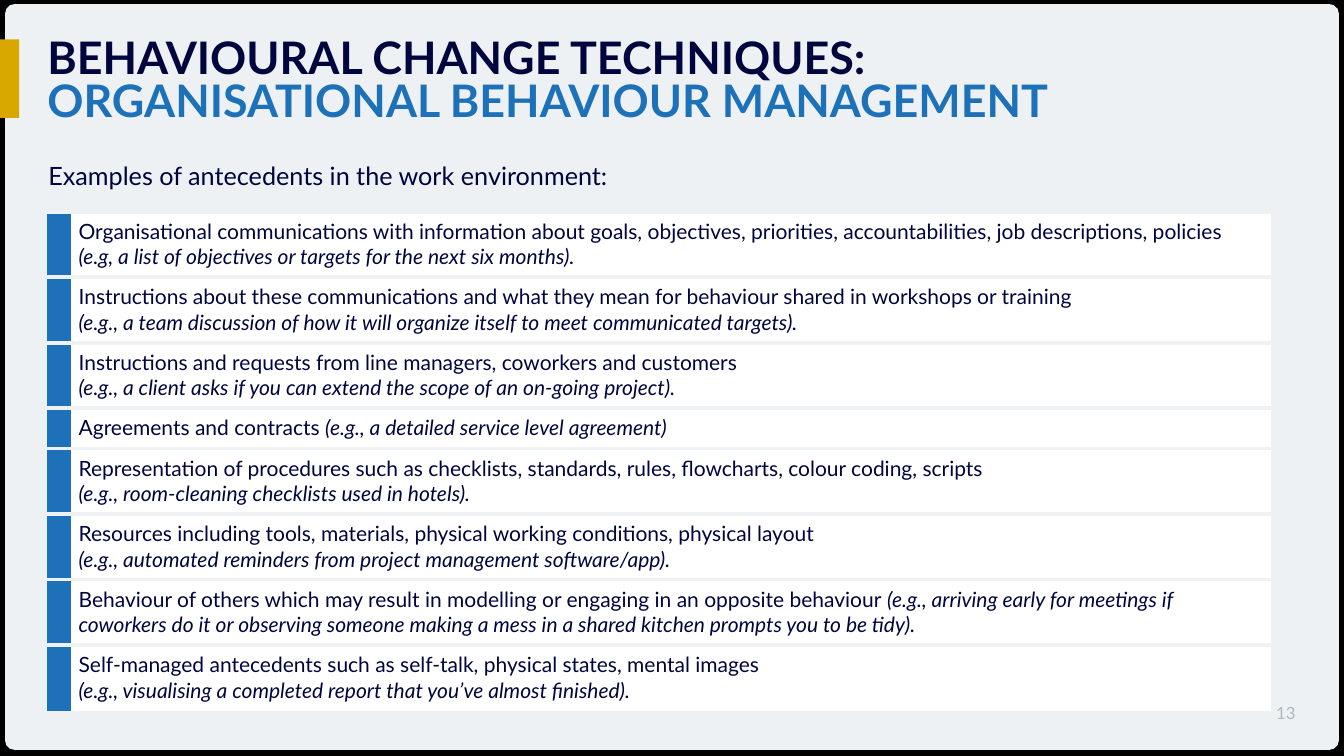
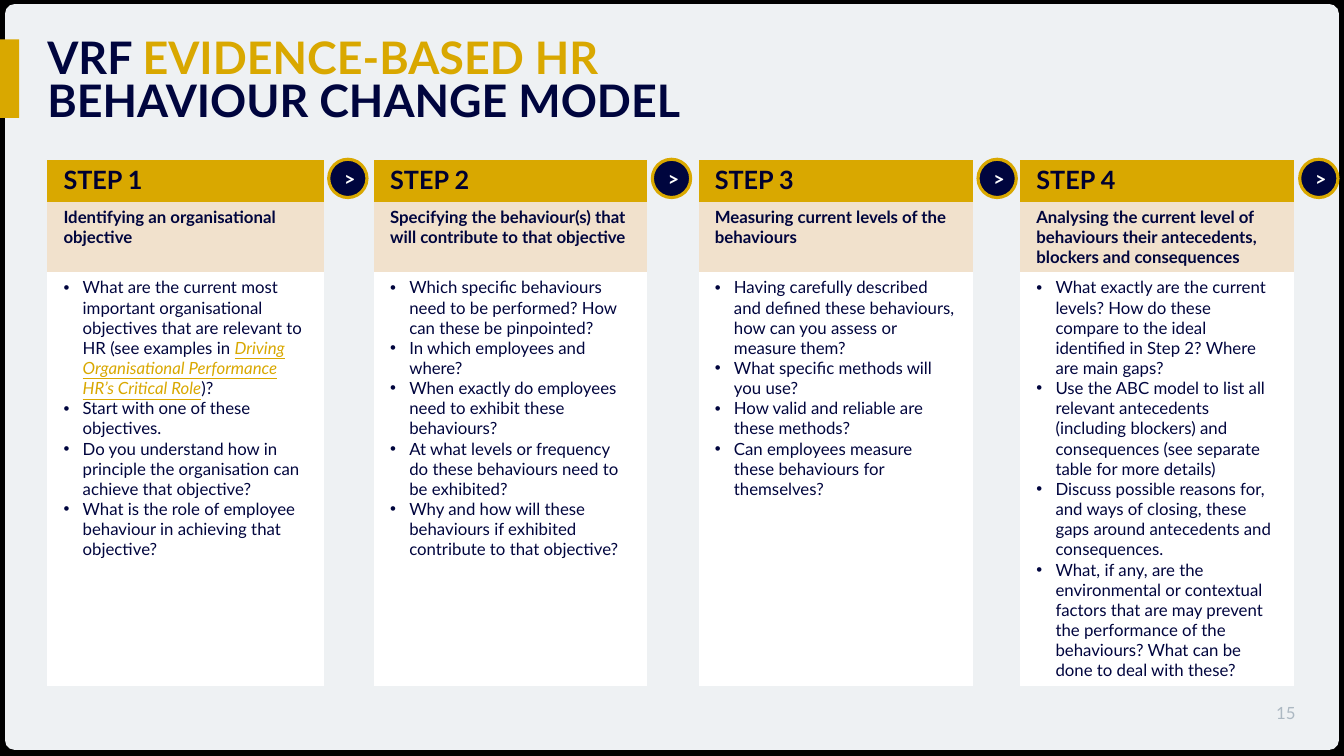
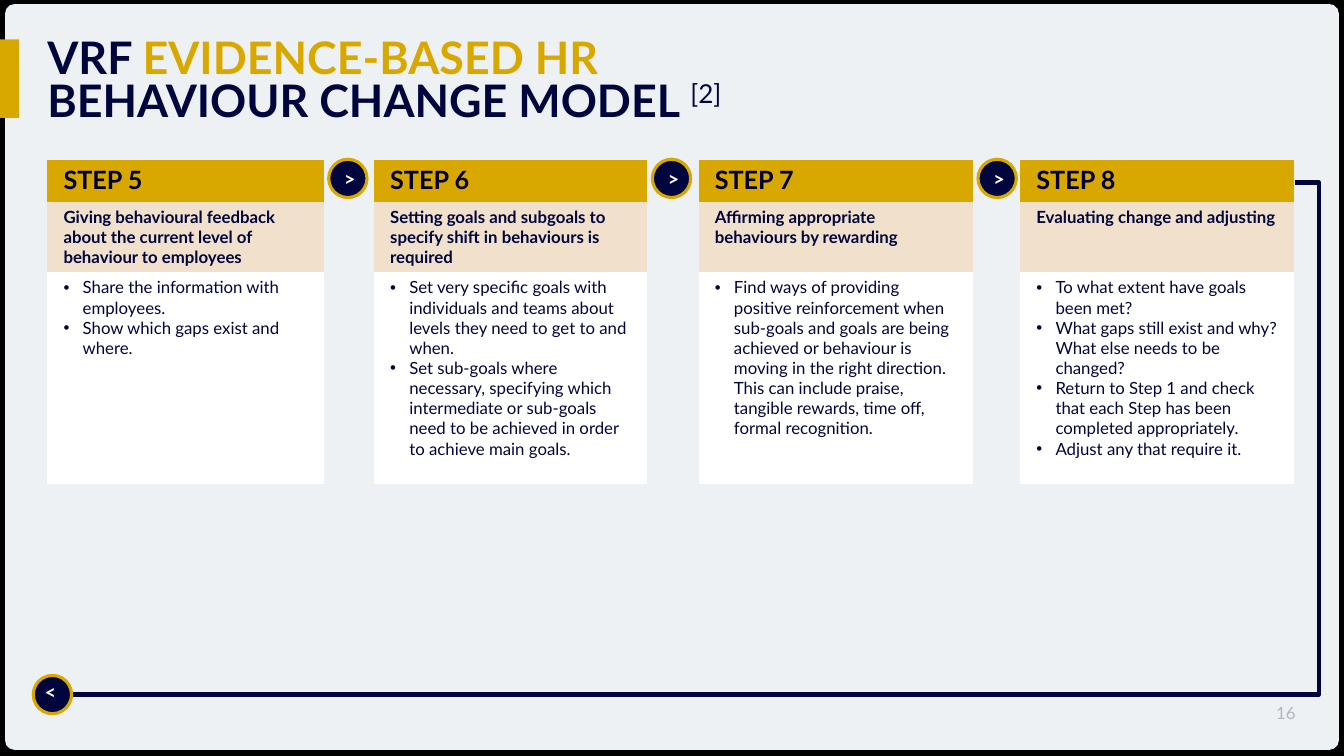
from lxml.etree import SubElement
from pptx import Presentation
from pptx.dml.color import RGBColor
from pptx.enum.shapes import MSO_SHAPE
from pptx.enum.text import MSO_ANCHOR, MSO_AUTO_SIZE, PP_ALIGN
from pptx.oxml.ns import qn
from pptx.util import Inches, Pt

FONT = "Lato"
NAVY, INK, BLUE, GOLD = "00053E", "000030", "1D71B8", "D9A800"
SAND, WHITE, BLACK = "F1E1CC", "FFFFFF", "000000"
PANEL, RULE, GREY = "EEF1F3", "EEF2F4", "ACB8C2"
NO_TABLE_STYLE = "{2D5ABB26-0587-4C30-8999-92F81FD0307C}"
WIDTH, HEIGHT = 13.33, 7.5
MARGIN, CONTENT_TOP = 0.47, 1.59
STEP_COLUMNS = [2.74, 0.5, 2.71, 0.51, 2.72, 0.47, 2.72]
CIRCLE = 0.38

MODEL_TITLE = [("VRF ", {}), ("EVIDENCE-BASED HR\n", {"color": GOLD}),
               ("BEHAVIOUR CHANGE MODEL", {})]

ANTECEDENTS = [
    ("Organisational communications with information about goals, objectives, priorities, "
     "accountabilities, job descriptions, policies\n",
     "(e.g, a list of objectives or targets for the next six months)."),
    ("Instructions about these communications and what they mean for behaviour shared in "
     "workshops or training\n",
     "(e.g., a team discussion of how it will organize itself to meet communicated targets)."),
    ("Instructions and requests from line managers, coworkers and customers\n",
     "(e.g., a client asks if you can extend the scope of an on-going project)."),
    ("Agreements and contracts ", "(e.g., a detailed service level agreement)"),
    ("Representation of procedures such as checklists, standards, rules, flowcharts, colour "
     "coding, scripts\n",
     "(e.g., room-cleaning checklists used in hotels)."),
    ("Resources including tools, materials, physical working conditions, physical layout\n",
     "(e.g., automated reminders from project management software/app)."),
    ("Behaviour of others which may result in modelling or engaging in an opposite behaviour ",
     "(e.g., arriving early for meetings if coworkers do it or observing someone making a mess "
     "in a shared kitchen prompts you to be tidy)."),
    ("Self-managed antecedents such as self-talk, physical states, mental images\n",
     "(e.g., visualising a completed report that you’ve almost finished)."),
]

FIRST_STEPS = [
    ("STEP 1", "Identifying an organisational objective", [
        [("What are the current most important organisational objectives that are relevant to HR "
          "(see examples in ", {}),
         ("Driving Organisational Performance HR’s Critical Role",
          {"color": GOLD, "italic": True, "underline": True}),
         (")?", {})],
        "Start with one of these objectives.",
        "Do you understand how in principle the organisation can achieve that objective?",
        "What is the role of employee behaviour in achieving that objective?"]),
    ("STEP 2", "Specifying the behaviour(s) that will contribute to that objective", [
        "Which specific behaviours need to be performed? How can these be pinpointed?",
        "In which employees and where?",
        "When exactly do employees need to exhibit these behaviours?",
        "At what levels or frequency do these behaviours need to be exhibited?",
        "Why and how will these behaviours if exhibited contribute to that objective?"]),
    ("STEP 3", "Measuring current levels of the behaviours", [
        "Having carefully described and defined these behaviours, how can you assess or measure "
        "them?",
        "What specific methods will you use?",
        "How valid and reliable are these methods?",
        "Can employees measure these behaviours for themselves?"]),
    ("STEP 4", "Analysing the current level of behaviours their antecedents, blockers and "
     "consequences", [
        "What exactly are the current levels? How do these compare to the ideal identified in "
        "Step 2? Where are main gaps?",
        "Use the ABC model to list all relevant antecedents (including blockers) and "
        "consequences (see separate table for more details)",
        "Discuss possible reasons for, and ways of closing, these gaps around antecedents and "
        "consequences.",
        "What, if any, are the environmental or contextual factors that are may prevent the "
        "performance of the behaviours? What can be done to deal with these?"]),
]

LAST_STEPS = [
    ("STEP 5", "Giving behavioural feedback about the current level of behaviour to employees", [
        "Share the information with employees.",
        "Show which gaps exist and where."]),
    ("STEP 6", "Setting goals and subgoals to specify shift in behaviours is required", [
        "Set very specific goals with individuals and teams about levels they need to get to and "
        "when.",
        "Set sub-goals where necessary, specifying which intermediate or sub-goals need to be "
        "achieved in order to achieve main goals."]),
    ("STEP 7", "Affirming appropriate behaviours by rewarding", [
        "Find ways of providing positive reinforcement when sub-goals and goals are being "
        "achieved or behaviour is moving in the right direction. This can include praise, "
        "tangible rewards, time off, formal recognition."]),
    ("STEP 8", "Evaluating change and adjusting", [
        "To what extent have goals been met?",
        "What gaps still exist and why? What else needs to be changed?",
        "Return to Step 1 and check that each Step has been completed appropriately.",
        "Adjust any that require it."]),
]


def rgb(color):
    return RGBColor.from_string(color)


def inches(*lengths):
    return [Inches(length) for length in lengths]


def set_insets(target, left=0, top=0, right=0, bottom=0):
    target.margin_left, target.margin_top = inches(left, top)
    target.margin_right, target.margin_bottom = inches(right, bottom)


def write_paragraph(paragraph, content, size, color=NAVY, bold=False, align=PP_ALIGN.LEFT,
                    bullet=False, spacing=None):
    paragraph.alignment = align
    if spacing:
        paragraph.line_spacing = spacing
    if bullet:
        properties = paragraph._p.get_or_add_pPr()
        properties.set("marL", str(Inches(0.19)))
        properties.set("indent", str(-Inches(0.19)))
        SubElement(properties, qn("a:buFont"), typeface="Arial")
        SubElement(properties, qn("a:buChar"), char="•")
    font = paragraph.font
    font.name, font.size, font.bold = FONT, Pt(size), bold
    font.color.rgb = rgb(color)
    for text, style in [(content, {})] if isinstance(content, str) else content:
        for index, line in enumerate(text.split("\n")):
            if index:
                paragraph.add_line_break()
            if line:
                style_run(paragraph.add_run(), line, **style)


def style_run(run, text, color=None, bold=None, italic=None, underline=None, raised=False):
    run.text = text
    run.font.bold, run.font.italic, run.font.underline = bold, italic, underline
    if color:
        run.font.color.rgb = rgb(color)
    if raised:
        run._r.get_or_add_rPr().set("baseline", "30000")


def add_box(slide, preset, box, fill, line=None):
    shape = slide.shapes.add_shape(preset, *inches(*box))
    shape.shadow.inherit = False
    shape.fill.solid()
    shape.fill.fore_color.rgb = rgb(fill)
    if line:
        shape.line.color.rgb = rgb(line)
        shape.line.width = Pt(2.25)
    else:
        shape.line.fill.background()
    return shape


def add_label(slide, box, text, size, color=NAVY, align=PP_ALIGN.LEFT, anchor=MSO_ANCHOR.TOP):
    frame = slide.shapes.add_textbox(*inches(*box)).text_frame
    frame.word_wrap = True
    frame.vertical_anchor = anchor
    set_insets(frame)
    write_paragraph(frame.paragraphs[0], text, size, color, align=align)


def add_backdrop(slide):
    panel_box = (0.05, 0.04, WIDTH - 0.1, HEIGHT - 0.1)
    backdrop = add_box(slide, MSO_SHAPE.RECTANGLE, (0, 0, WIDTH, HEIGHT), BLACK)
    panel = add_box(slide, MSO_SHAPE.ROUNDED_RECTANGLE, panel_box, PANEL)
    panel.adjustments[0] = 0.013
    marker = add_box(slide, MSO_SHAPE.RECTANGLE, (0, 0.39, 0.19, 0.78), GOLD)
    layout_tree = slide.slide_layout.shapes.element
    for index, shape in enumerate((backdrop, panel, marker), 2):
        layout_tree.insert(index, shape.element)


def start_slide(presentation, title_runs, number):
    slide = presentation.slides.add_slide(presentation.slide_layouts[5])
    title = slide.shapes.title
    title.left, title.top, title.width, title.height = inches(MARGIN, 0.39, 11.76, 0.86)
    frame = title.text_frame
    frame.word_wrap = True
    frame.auto_size = MSO_AUTO_SIZE.NONE
    frame.vertical_anchor = MSO_ANCHOR.BOTTOM
    set_insets(frame)
    write_paragraph(frame.paragraphs[0], title_runs, 32, bold=True, spacing=0.8)
    add_label(slide, (12.42, 6.97, 0.43, 0.2), str(number), 12, GREY, PP_ALIGN.RIGHT,
              MSO_ANCHOR.MIDDLE)
    return slide


def add_grid(slide, left, top, columns, rows):
    box = inches(left, top, sum(columns), sum(rows))
    frame = slide.shapes.add_table(len(rows), len(columns), *box)
    frame.element.find(".//" + qn("a:tableStyleId")).text = NO_TABLE_STYLE
    table = frame.table
    table.first_row = table.horz_banding = False
    for column, width in zip(table.columns, columns):
        column.width = Inches(width)
    for row, height in zip(table.rows, rows):
        row.height = Inches(height)
    for cell in table.iter_cells():
        cell.fill.background()
        set_insets(cell)
    return table


def fill_cell(cell, color):
    cell.fill.solid()
    cell.fill.fore_color.rgb = rgb(color)


def rule_cell(cell, edges):
    properties = cell._tc.get_or_add_tcPr()
    for index, edge in enumerate(edges):
        line = SubElement(properties, qn("a:ln" + edge), w=str(Pt(3)))
        solid = SubElement(line, qn("a:solidFill"))
        SubElement(solid, qn("a:srgbClr"), val=RULE)
        properties.insert(index, line)


def add_antecedent_table(slide, left, top):
    heights = [0.64 if "\n" in text or len(text + example) > 130 else 0.4
               for text, example in ANTECEDENTS]
    table = add_grid(slide, left, top, [0.23, 11.91], heights)
    for index, (text, example) in enumerate(ANTECEDENTS):
        marker, body = table.cell(index, 0), table.cell(index, 1)
        for cell, color in ((marker, BLUE), (body, WHITE)):
            rule_cell(cell, "T" if index == len(ANTECEDENTS) - 1 else "TB")
            fill_cell(cell, color)
        body.vertical_anchor = MSO_ANCHOR.MIDDLE
        set_insets(body, 0.08, 0.07, 0.08, 0.08)
        write_paragraph(body.text_frame.paragraphs[0],
                        [(text, {}), (example, {"italic": True})], 15)


def add_step_table(slide, left, top, steps, body_height):
    table = add_grid(slide, left, top, STEP_COLUMNS, [0.41, 0.69, body_height])
    for index, (name, aim, points) in enumerate(steps):
        cells = [table.cell(row, 2 * index) for row in range(3)]
        for cell, color, inset in zip(cells, (GOLD, SAND, WHITE), (0.04, 0.05, 0.05)):
            fill_cell(cell, color)
            set_insets(cell, 0.16, inset, 0.16, inset)
        write_paragraph(cells[0].text_frame.paragraphs[0], name, 18, INK, bold=True)
        write_paragraph(cells[1].text_frame.paragraphs[0], aim, 12, bold=True)
        frame = cells[2].text_frame
        for position, point in enumerate(points):
            paragraph = frame.add_paragraph() if position else frame.paragraphs[0]
            write_paragraph(paragraph, point, 12, bullet=True)


def add_arrow_circle(slide, left, top, rotation=0):
    circle = add_box(slide, MSO_SHAPE.OVAL, (left, top, CIRCLE, CIRCLE), NAVY, GOLD)
    circle.rotation = rotation
    frame = circle.text_frame
    frame.word_wrap = False
    frame.vertical_anchor = MSO_ANCHOR.MIDDLE
    set_insets(frame, left=0.04)
    write_paragraph(frame.paragraphs[0], ">", 14, WHITE, bold=True, align=PP_ALIGN.CENTER)


def add_step_arrows(slide, left, top, count):
    for index in range(count):
        column_right = left + sum(STEP_COLUMNS[:2 * index + 1])
        add_arrow_circle(slide, column_right + 0.05, top)


def add_return_line(slide, left, top, right, bottom):
    start = left + sum(STEP_COLUMNS)
    builder = slide.shapes.build_freeform(*inches(start, top))
    corners = [(right, top), (right, bottom), (left, bottom)]
    builder.add_line_segments([inches(*corner) for corner in corners], close=False)
    line = builder.convert_to_shape()
    line.shadow.inherit = False
    line.fill.background()
    line.line.color.rgb = rgb(NAVY)
    line.line.width = Pt(3)
    add_arrow_circle(slide, left - 0.14, bottom - CIRCLE / 2, 180)


def build_antecedents(presentation):
    title = [("BEHAVIOURAL CHANGE TECHNIQUES:\n", {}),
             ("ORGANISATIONAL BEHAVIOUR MANAGEMENT", {"color": BLUE})]
    slide = start_slide(presentation, title, 13)
    add_backdrop(slide)
    add_label(slide, (MARGIN + 0.01, CONTENT_TOP, 12.36, 0.3),
              "Examples of antecedents in the work environment:", 18)
    add_antecedent_table(slide, MARGIN, 2.1)


def build_steps(presentation, title, number, steps, body_height, arrows):
    slide = start_slide(presentation, title, number)
    add_step_table(slide, MARGIN, CONTENT_TOP, steps, body_height)
    add_step_arrows(slide, MARGIN, CONTENT_TOP - 0.01, arrows)
    return slide


def main():
    presentation = Presentation()
    presentation.slide_width, presentation.slide_height = inches(WIDTH, HEIGHT)
    build_antecedents(presentation)
    build_steps(presentation, MODEL_TITLE, 15, FIRST_STEPS, 3.9, 4)
    second_title = MODEL_TITLE + [(" ", {}), ("[2]", {"bold": False, "raised": True})]
    slide = build_steps(presentation, second_title, 16, LAST_STEPS, 2.1, 3)
    add_return_line(slide, MARGIN, 1.81, 13.08, 6.89)
    presentation.save("out.pptx")


if __name__ == "__main__":
    main()
